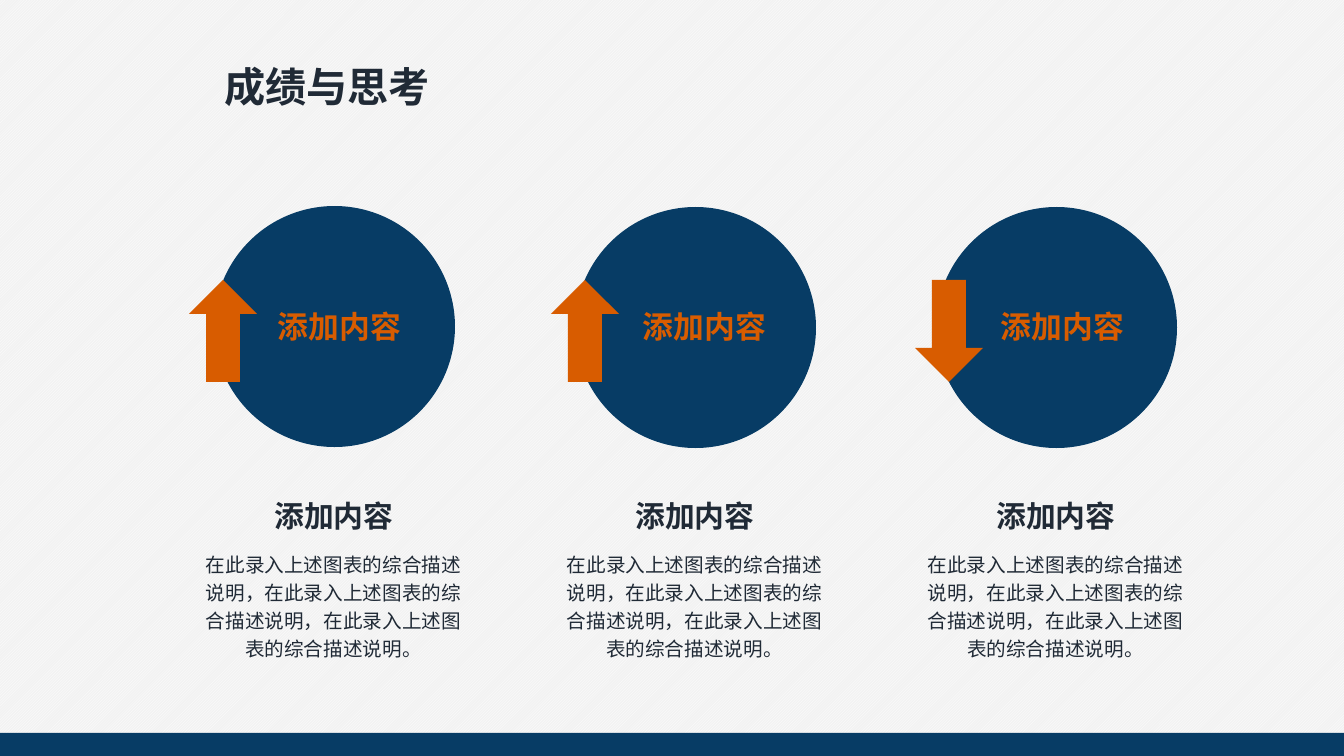
from dataclasses import dataclass
from typing import Union

import lxml.etree
import pptx
import pptx.dml.color
import pptx.enum.dml
import pptx.enum.shapes
import pptx.enum.text
import pptx.oxml.ns
import pptx.shapes.autoshape
import pptx.shapes.shapetree
import pptx.slide
import pptx.text.text
import pptx.util

EMU_PER_PX = 914400 / 100.8
Shape = pptx.enum.shapes.MSO_SHAPE
Align = pptx.enum.text.PP_ALIGN
AutoSize = pptx.enum.text.MSO_AUTO_SIZE
Shapes = Union[pptx.shapes.shapetree.SlideShapes, pptx.shapes.shapetree.GroupShapes]


@dataclass(frozen=True)
class Theme:
    navy: str = "073C65"
    orange: str = "D85C00"
    ink: str = "202A36"
    paper: str = "F2F2F2"
    stripe: str = "FFFFFF"
    latin: str = "Arial"
    chinese: str = "Noto Sans CJK SC"
    title_size: float = 29.4
    label_size: float = 22
    heading_size: float = 21.3
    body_size: float = 14


@dataclass(frozen=True)
class Box:
    left: int
    top: int
    width: int
    height: int

    def emu(self) -> list[pptx.util.Emu]:
        return [px(length) for length in (self.left, self.top, self.width, self.height)]


@dataclass(frozen=True)
class Column:
    circle_top: int
    arrow: Shape
    arrow_left: int
    label_left: int


THEME = Theme()
SLIDE_WIDTH, SLIDE_HEIGHT = 1344, 756
FIRST_LEFT, PITCH = 214, 361
CAPTION = "添加内容"
DESCRIPTION = "，".join(["在此录入上述图表的综合描述说明"] * 3) + "。"
COLUMNS = [
    Column(206, Shape.UP_ARROW, 189, 268),
    Column(207, Shape.UP_ARROW, 551, 633),
    Column(207, Shape.DOWN_ARROW, 915, 991),
]


def px(length: int) -> pptx.util.Emu:
    return pptx.util.Emu(round(length * EMU_PER_PX))


def rgb(color: str) -> pptx.dml.color.RGBColor:
    return pptx.dml.color.RGBColor.from_string(color)


def add_solid(shapes: Shapes, kind: Shape, box: Box, color: str) -> None:
    shape = shapes.add_shape(kind, *box.emu())
    shape.shadow.inherit = False
    shape.fill.solid()
    shape.fill.fore_color.rgb = rgb(color)
    shape.line.fill.background()


def write(
    frame: pptx.text.text.TextFrame, text: str, size: float, color: str,
    align: Align, bold: bool, wrap: bool, latin: str = THEME.chinese,
) -> None:
    frame.text = text
    frame.word_wrap = wrap
    frame.auto_size = AutoSize.SHAPE_TO_FIT_TEXT
    frame.vertical_anchor = pptx.enum.text.MSO_ANCHOR.TOP
    para = frame.paragraphs[0]
    para.alignment = align
    span = para.runs[0]
    span.font.size = pptx.util.Pt(size)
    span.font.bold = bold
    span.font.color.rgb = rgb(color)
    span.font.name = latin
    east_asian = lxml.etree.SubElement(span.font._element, pptx.oxml.ns.qn("a:ea"))
    east_asian.set("typeface", THEME.chinese)


def add_title(page: pptx.slide.Slide) -> None:
    title = page.shapes.title
    title.left, title.top, title.width, title.height = Box(214, 56, 228, 59).emu()
    write(title.text_frame, "成绩与思考", THEME.title_size, THEME.ink,
          Align.LEFT, True, False, THEME.latin)


def add_explanation(page: pptx.slide.Slide, left: int) -> None:
    group = page.shapes.add_group_shape()
    body = group.shapes.add_textbox(*Box(left - 27, 541, 293, 121).emu()).text_frame
    write(body, DESCRIPTION, THEME.body_size, THEME.ink, Align.CENTER, False, True)
    body.auto_size = AutoSize.NONE
    body.margin_left = body.margin_right = px(13)
    body.margin_top = body.margin_bottom = px(7)
    body.paragraphs[0].line_spacing = 1.2
    heading = group.shapes.add_textbox(*Box(left + 50, 493, 140, 46).emu())
    write(heading.text_frame, CAPTION, THEME.heading_size, THEME.ink,
          Align.CENTER, True, False)


def add_column(page: pptx.slide.Slide, column: Column, left: int) -> None:
    circle = Box(left, column.circle_top, 241, 241)
    add_solid(page.shapes, Shape.OVAL, circle, THEME.navy)
    arrow = Box(column.arrow_left, 280, 68, 102)
    add_solid(page.shapes, column.arrow, arrow, THEME.orange)
    label = page.shapes.add_textbox(*Box(column.label_left, 303, 151, 47).emu())
    write(label.text_frame, CAPTION, THEME.label_size, THEME.orange,
          Align.LEFT, True, True)
    add_explanation(page, left)


def main() -> None:
    deck = pptx.Presentation()
    deck.slide_width, deck.slide_height = px(SLIDE_WIDTH), px(SLIDE_HEIGHT)
    page = deck.slides.add_slide(deck.slide_layouts.get_by_name("Title Only"))
    backdrop = page.background.fill
    backdrop.patterned()
    backdrop.pattern = pptx.enum.dml.MSO_PATTERN.LIGHT_UPWARD_DIAGONAL
    backdrop.fore_color.rgb = rgb(THEME.stripe)
    backdrop.back_color.rgb = rgb(THEME.paper)
    add_title(page)
    for index, column in enumerate(COLUMNS):
        add_column(page, column, FIRST_LEFT + index * PITCH)
    footer = Box(0, 733, SLIDE_WIDTH, SLIDE_HEIGHT - 733)
    add_solid(page.shapes, Shape.RECTANGLE, footer, THEME.navy)
    deck.save("out.pptx")


if __name__ == "__main__":
    main()
